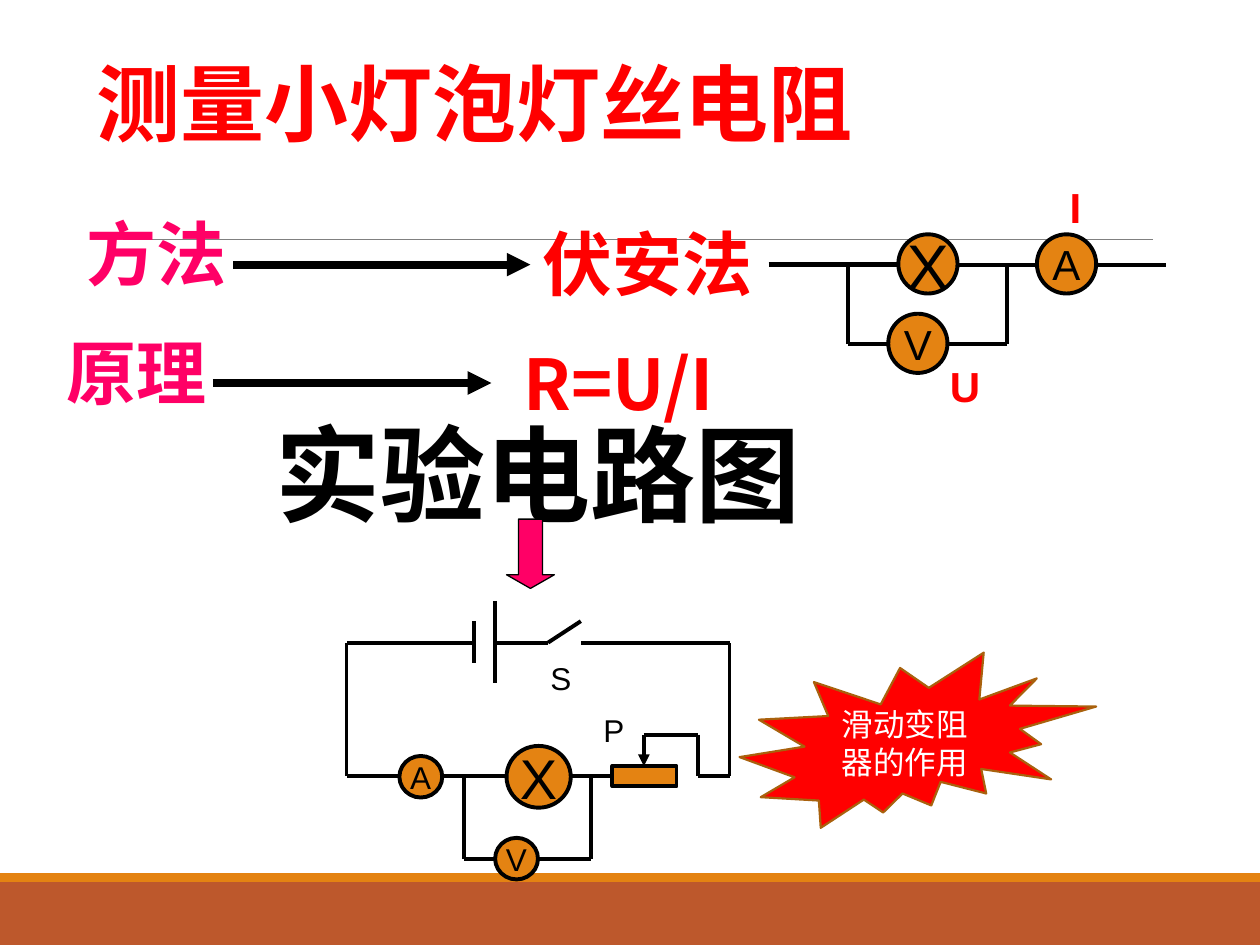
from lxml import etree
from pptx import Presentation
from pptx.dml.color import RGBColor
from pptx.enum.shapes import MSO_CONNECTOR, MSO_SHAPE
from pptx.enum.text import MSO_ANCHOR, PP_ALIGN
from pptx.oxml.ns import qn
from pptx.util import Inches, Pt

STRAIGHT = MSO_CONNECTOR.STRAIGHT
RECTANGLE = MSO_SHAPE.RECTANGLE
OVAL = MSO_SHAPE.OVAL
DOWN_ARROW = MSO_SHAPE.DOWN_ARROW
BURST = MSO_SHAPE.EXPLOSION2
MIDDLE = MSO_ANCHOR.MIDDLE
CENTER = PP_ALIGN.CENTER

BLACK, RED, PINK, ORANGE = "000000", "FF0000", "FF0066", "E48312"
ARIAL, CJK = "Arial", "Noto Sans CJK JP"


def color(value):
    return RGBColor.from_string(value)


def style_text(shape, text, size, font, text_color, bold=False):
    shape.text_frame.text = text
    run_font = shape.text_frame.paragraphs[0].runs[0].font
    run_font.size = Pt(size)
    run_font.name = font
    run_font.bold = bold
    run_font.color.rgb = color(text_color)


def add_label(slide, text, left, top, width, height, size,
              text_color=BLACK, font=ARIAL, bold=True):
    box = slide.shapes.add_textbox(
        Inches(left), Inches(top), Inches(width), Inches(height))
    box.text_frame.word_wrap = True
    style_text(box, text, size, font, text_color, bold)


def add_block(slide, kind, left, top, width, height, fill,
              line=None, weight=2.25):
    shape = slide.shapes.add_shape(
        kind, Inches(left), Inches(top), Inches(width), Inches(height))
    shape.shadow.inherit = False
    shape.fill.solid()
    shape.fill.fore_color.rgb = color(fill)
    if line:
        shape.line.color.rgb = color(line)
        shape.line.width = Pt(weight)
    else:
        shape.line.fill.background()
    return shape


def center_text(shape, text, size, font, text_color, wrap):
    style_text(shape, text, size, font, text_color)
    shape.text_frame.word_wrap = wrap
    shape.text_frame.vertical_anchor = MIDDLE
    shape.text_frame.paragraphs[0].alignment = CENTER


def add_symbol(slide, text, left, top, width, height, size):
    circle = add_block(slide, OVAL, left, top, width, height, ORANGE, BLACK)
    center_text(circle, text, size, ARIAL, BLACK, False)


def add_line(slide, start, end, weight=2.25, line_color=BLACK, arrow=False):
    line = slide.shapes.add_connector(
        STRAIGHT, *(Inches(value) for value in (*start, *end)))
    line.line.color.rgb = color(line_color)
    line.line.width = Pt(weight)
    properties = line._element.spPr
    if arrow:
        etree.SubElement(properties.find(qn("a:ln")), qn("a:tailEnd"),
                         type="triangle")
    etree.SubElement(properties, qn("a:effectLst"))


def add_wire(slide, *points):
    for start, end in zip(points, points[1:]):
        add_line(slide, start, end)


def add_background(slide):
    add_block(slide, RECTANGLE, 0, 7, 10, 0.5, "BD582C")
    add_block(slide, RECTANGLE, 0, 6.93, 10, 0.07, ORANGE)
    add_line(slide, (0.98, 1.9), (9.15, 1.9), 0.5, "808080")


def add_headings(slide):
    add_label(slide, "测量小灯泡灯丝电阻", 0.67, 0.36, 8.51, 0.9, 48, RED)
    add_line(slide, (1.85, 2.1), (4.21, 2.1), 4.5, arrow=True)
    add_label(slide, "伏安法", 4.21, 1.7, 3.39, 0.77, 40, RED)
    add_line(slide, (1.69, 3.04), (3.9, 3.04), 4.5, arrow=True)
    add_label(slide, "方法", 0.59, 1.62, 2.28, 0.77, 40, PINK, CJK)
    add_label(slide, "原理", 0.43, 2.57, 1.5, 0.77, 40, PINK, CJK)
    add_label(slide, "R=U/I", 4.06, 2.65, 2.99, 0.77, 40, RED, CJK)
    add_label(slide, "实验电路图", 2.09, 3.2, 4.88, 1.1, 60)
    arrow = add_block(slide, DOWN_ARROW, 4.02, 4.12, 0.38, 0.55,
                      PINK, BLACK, 0.75)
    arrow.adjustments[0] = 0.5
    arrow.adjustments[1] = 0.285


def add_experiment_circuit(slide):
    top, main, bottom = 5.1, 6.16, 6.82
    add_line(slide, (5.11, 5.83), (5.11, 6.08), arrow=True)
    add_wire(slide, (3.76, top), (2.75, top), (2.75, main), (3.17, main))
    add_wire(slide, (3.51, main), (4.02, main))
    add_wire(slide, (5.11, 5.83), (5.54, 5.83), (5.54, main),
             (5.79, main), (5.79, top), (4.61, top))
    add_wire(slide, (3.76, 4.93), (3.76, 5.26))
    add_wire(slide, (3.93, 4.77), (3.93, 5.42))
    add_wire(slide, (3.93, top), (4.35, top), (4.61, 4.93))
    add_wire(slide, (4.52, main), (4.86, main))
    add_wire(slide, (3.68, main), (3.68, bottom), (3.93, bottom))
    add_wire(slide, (4.69, main), (4.69, bottom), (4.27, bottom))
    add_block(slide, RECTANGLE, 4.86, 6.08, 0.51, 0.16, ORANGE, BLACK)
    add_symbol(slide, "A", 3.17, 6, 0.34, 0.33, 18)
    add_symbol(slide, "V", 3.93, 6.65, 0.34, 0.33, 18)
    add_symbol(slide, "X", 4.02, 5.92, 0.51, 0.49, 32)
    add_label(slide, "P", 4.69, 5.59, 0.34, 0.45, 18, bold=False)
    add_label(slide, "S", 4.27, 5.18, 0.42, 0.45, 18, bold=False)


def add_method_circuit(slide):
    main, bottom, diameter = 2.1, 2.73, 0.47
    add_line(slide, (6.1, main), (7.13, main), 3)
    add_wire(slide, (7.6, main), (8.23, main))
    add_wire(slide, (8.7, main), (9.25, main))
    add_wire(slide, (6.73, main), (6.73, bottom), (7.13, bottom))
    add_wire(slide, (7.52, bottom), (7.99, bottom), (7.99, main))
    for text, left, top, size in (
            ("X", 7.13, 1.86, 36), ("V", 7.05, 2.49, 24), ("A", 8.23, 1.86, 24)):
        add_symbol(slide, text, left, top, diameter, diameter, size)
    add_label(slide, "U", 7.44, 2.81, 0.47, 0.5, 24, RED)
    add_label(slide, "I", 8.39, 1.39, 0.47, 0.5, 24, RED)


def main():
    presentation = Presentation()
    presentation.slide_width = Inches(10)
    presentation.slide_height = Inches(7.5)
    slide = presentation.slides.add_slide(presentation.slide_layouts[6])
    add_background(slide)
    add_headings(slide)
    add_experiment_circuit(slide)
    add_method_circuit(slide)
    burst = add_block(slide, BURST, 5.87, 5.18, 2.83, 1.39,
                      RED, "A9610D", 1.25)
    center_text(burst, "滑动变阻器的作用", 18, "Calibri", "FFFFFF", True)
    presentation.save("out.pptx")


if __name__ == "__main__":
    main()
